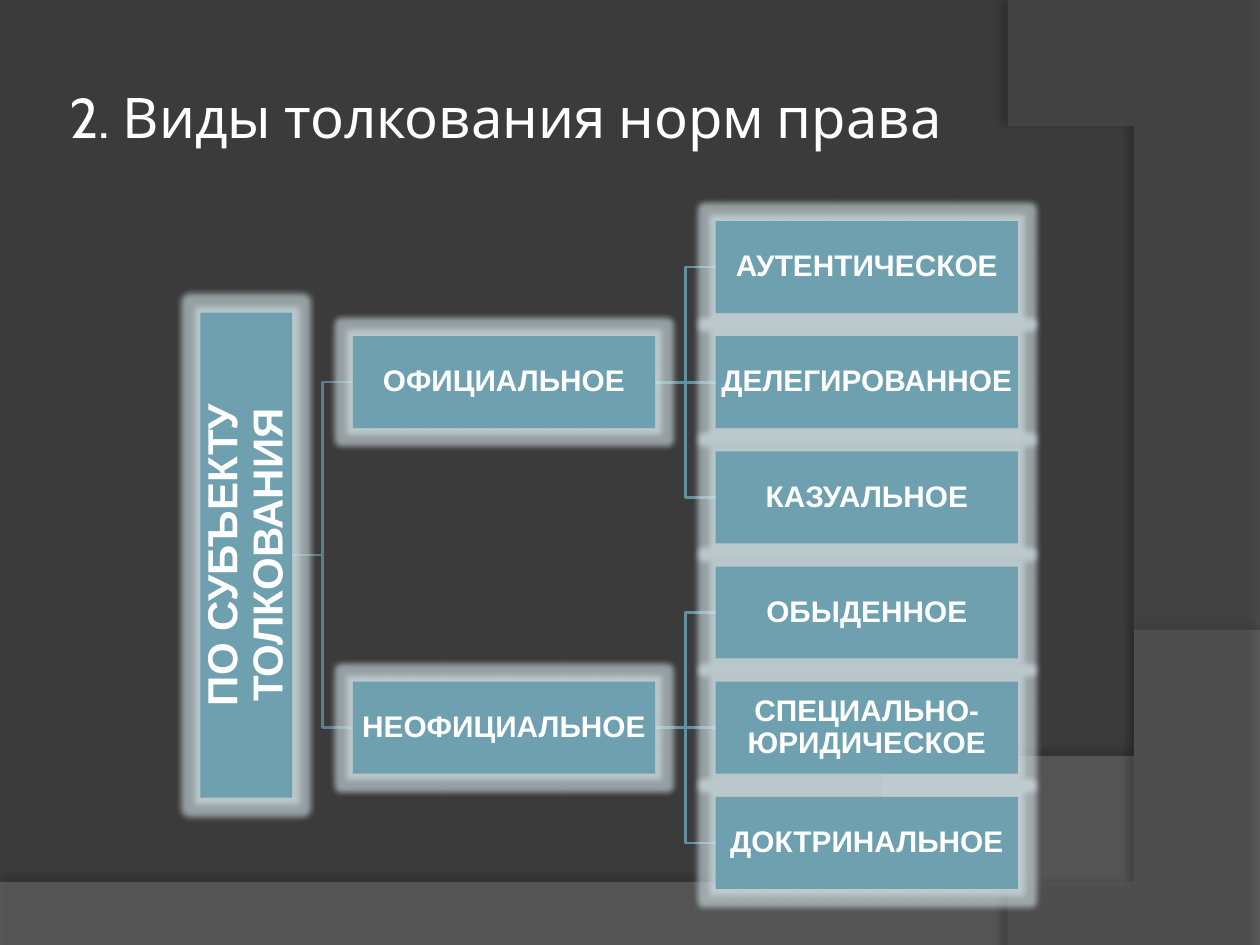
from dataclasses import dataclass

from lxml.etree import SubElement
from pptx import Presentation
from pptx.dml.color import RGBColor
from pptx.enum.shapes import MSO_CONNECTOR, MSO_SHAPE
from pptx.enum.text import MSO_ANCHOR, PP_ALIGN
from pptx.oxml.ns import qn
from pptx.util import Inches, Pt

COLORS = {
    "background": "3B3B3B",
    "lower_wave": "7F7F7F",
    "right_arc": "5E5E5E",
    "box": "6EA0B0",
    "glow": "D3E3E8",
    "first_link": "58808D",
    "second_link": "6491A0",
    "text": "FFFFFF",
    "shadow": "000000",
}
BOX_WIDTH, BOX_HEIGHT = 2.4, 0.73
ROOT_LENGTH, ROOT_CENTER = 3.85, 1.955
KIND_LEFT, FORM_LEFT = 2.8, 5.68
FIRST_ROW, ROW_STEP = 2.12, 0.914


@dataclass
class Kind:
    name: str
    forms: list[str]


KINDS = [
    Kind("ОФИЦИАЛЬНОЕ", ["АУТЕНТИЧЕСКОЕ", "ДЕЛЕГИРОВАННОЕ", "КАЗУАЛЬНОЕ"]),
    Kind("НЕОФИЦИАЛЬНОЕ", ["ОБЫДЕННОЕ", "СПЕЦИАЛЬНО-ЮРИДИЧЕСКОЕ", "ДОКТРИНАЛЬНОЕ"]),
]


def color(name: str) -> RGBColor:
    return RGBColor.from_string(COLORS[name])


def add_color(parent, name: str, alpha: int) -> None:
    tint = SubElement(parent, qn("a:srgbClr"), val=COLORS[name])
    SubElement(tint, qn("a:alpha"), val=str(alpha * 1000))


def add_effect(shape, tag: str, name: str, alpha: int, **settings: str) -> None:
    shape.shadow.inherit = False
    effects = shape._element.spPr.find(qn("a:effectLst"))
    add_color(SubElement(effects, qn(tag), **settings), name, alpha)


def curve(start, first, second, end, steps: int = 48) -> list[tuple[float, float]]:
    """Points along a cubic curve, without its start."""
    points = []
    for step in range(1, steps + 1):
        t = step / steps
        weights = ((1 - t) ** 3, 3 * t * (1 - t) ** 2, 3 * t**2 * (1 - t), t**3)
        corners = (start, first, second, end)
        points.append(tuple(sum(w * c[axis] for w, c in zip(weights, corners))
                            for axis in (0, 1)))
    return points


def add_backdrop(page, points, name: str, alpha: int, shade: int,
                 distance: float, direction: int) -> None:
    builder = page.shapes.build_freeform(*points[0], scale=Inches(1))
    builder.add_line_segments(points[1:], close=True)
    shape = builder.convert_to_shape()
    shape.fill.solid()
    shape.fill.fore_color.rgb = color(name)
    tint = shape._element.spPr.find(qn("a:solidFill"))[0]
    SubElement(tint, qn("a:alpha"), val=str(alpha * 1000))
    shape.line.fill.background()
    add_effect(shape, "a:outerShdw", "shadow", shade, blurRad=str(Pt(4)),
               dist=str(Pt(distance)), dir=str(direction * 60000))


def add_box(page, text: str, left: float, middle: float, width: float = BOX_WIDTH,
            size: int = 17, inset: float = 0.01, rotation: int = 0) -> None:
    box = page.shapes.add_shape(
        MSO_SHAPE.RECTANGLE, Inches(left), Inches(middle - BOX_HEIGHT / 2),
        Inches(width), Inches(BOX_HEIGHT))
    box.rotation = rotation
    box.fill.solid()
    box.fill.fore_color.rgb = color("box")
    box.line.fill.background()
    add_effect(box, "a:glow", "glow", 60, rad=str(Pt(7)))
    frame = box.text_frame
    frame.word_wrap = True
    frame.vertical_anchor = MSO_ANCHOR.MIDDLE
    frame.margin_left = frame.margin_right = Inches(inset)
    frame.margin_top = frame.margin_bottom = Inches(inset)
    para = frame.paragraphs[0]
    para.text = text
    para.alignment = PP_ALIGN.CENTER
    para.line_spacing = 0.9
    para.font.name = "Arial"
    para.font.size = Pt(size)
    para.font.bold = True
    para.font.color.rgb = color("text")


def add_link(page, right: float, start: float, end: float, name: str) -> None:
    """Link the column that starts at right with the column before it."""
    straight = abs(start - end) < 0.01
    link = page.shapes.add_connector(
        MSO_CONNECTOR.STRAIGHT if straight else MSO_CONNECTOR.ELBOW,
        Inches(right - 0.48), Inches(start), Inches(right), Inches(end))
    link.line.color.rgb = color(name)
    link.line.width = Pt(1.5)
    SubElement(link._element.spPr, qn("a:effectLst"))


def add_title(page, text: str) -> None:
    title = page.shapes.title
    title.left, title.top = Inches(0.5), Inches(0.3)
    title.width, title.height = Inches(8.17), Inches(1.25)
    frame = title.text_frame
    frame.vertical_anchor = MSO_ANCHOR.MIDDLE
    frame.margin_left = frame.margin_right = Inches(0.05)
    para = frame.paragraphs[0]
    para.text = text
    para.alignment = PP_ALIGN.LEFT
    para.font.name = "Cabin"
    para.font.size = Pt(32)
    para.font.color.rgb = color("text")


def main() -> None:
    deck = Presentation()
    deck.slide_width, deck.slide_height = Inches(10), Inches(7.5)
    page = deck.slides.add_slide(deck.slide_layouts[5])
    page.background.fill.solid()
    page.background.fill.fore_color.rgb = color("background")

    # Backdrop curves
    wave = [(0, 7.05), (0, 7.5), (10, 7.5), (10, 5.2)]
    wave += curve((10, 5.2), (5.59, 7.29), (3.91, 7.19), (0, 7.05))
    add_backdrop(page, wave, "lower_wave", 45, 35, 3.5, 270)
    arc = [(10, 0.02), (10, 7.5), (8.21, 7.5)]
    arc += curve((8.21, 7.5), (9.35, 6.19), (10.18, 3), (8, 0))
    add_backdrop(page, arc, "right_arc", 40, 45, 4, 180)

    add_title(page, "2. Виды толкования норм права")

    # Row centres: each kind sits level with the middle one of its forms
    rows = [[FIRST_ROW + ROW_STEP * (3 * index + offset) for offset in range(3)]
            for index in range(len(KINDS))]
    root_middle = (rows[0][1] + rows[1][1]) / 2

    # Links lie behind the boxes
    for centers in rows:
        add_link(page, KIND_LEFT, root_middle, centers[1], "first_link")
        for center in centers:
            add_link(page, FORM_LEFT, centers[1], center, "second_link")

    # Boxes
    add_box(page, "ПО СУБЪЕКТУ ТОЛКОВАНИЯ", ROOT_CENTER - ROOT_LENGTH / 2,
            root_middle, ROOT_LENGTH, size=24, inset=0.02, rotation=270)
    for kind, centers in zip(KINDS, rows):
        add_box(page, kind.name, KIND_LEFT, centers[1])
        for form, center in zip(kind.forms, centers):
            add_box(page, form, FORM_LEFT, center)

    deck.save("out.pptx")


if __name__ == "__main__":
    main()
